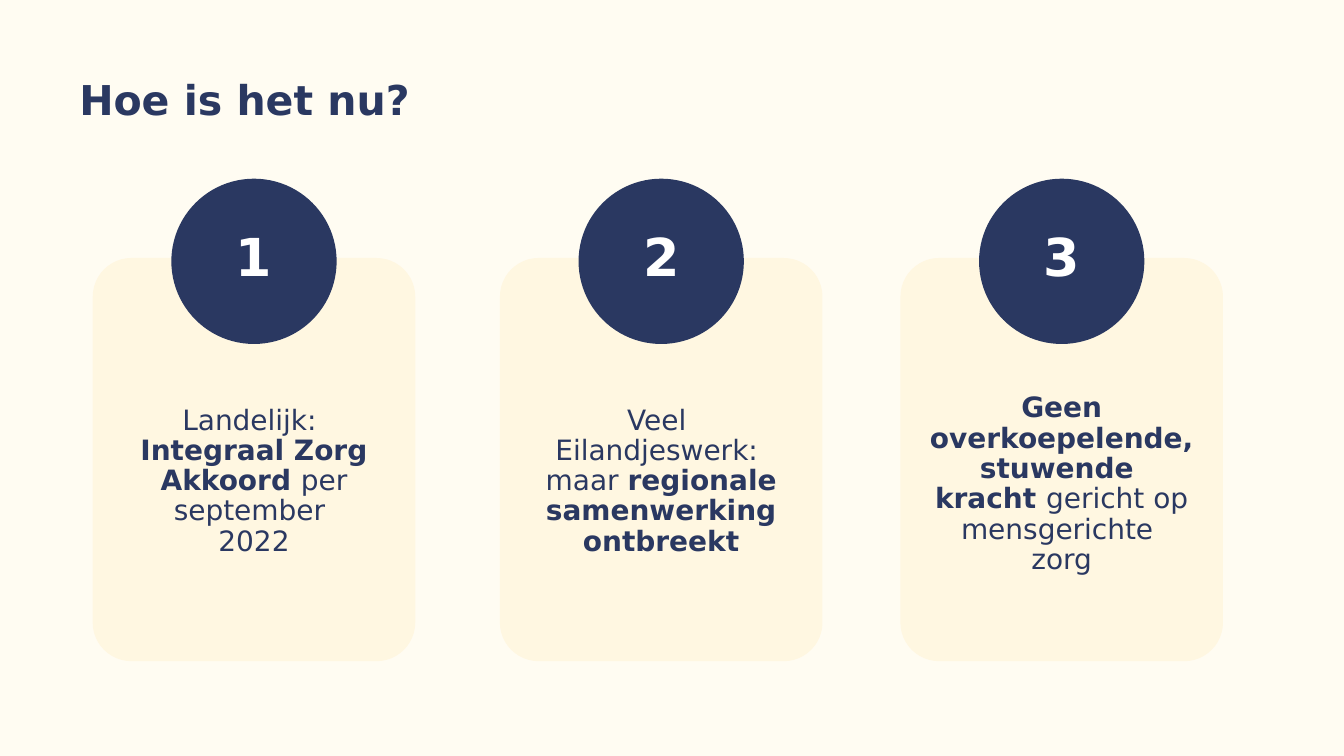
import pptx
import pptx.dml.color
import pptx.enum.shapes
import pptx.enum.text
import pptx.util

Inches = pptx.util.Inches
Align = pptx.enum.text.PP_ALIGN
Shape = pptx.enum.shapes.MSO_SHAPE

IVORY = pptx.dml.color.RGBColor(0xFF, 0xFC, 0xF2)
CREAM = pptx.dml.color.RGBColor(0xFF, 0xF7, 0xE1)
NAVY = pptx.dml.color.RGBColor(0x2A, 0x38, 0x61)
WHITE = pptx.dml.color.RGBColor(0xFF, 0xFF, 0xFF)
FONT = "DejaVu Sans"

CARD_TOP, CARD_WIDTH, CARD_HEIGHT = 1.92, 2.4, 3
CIRCLE_SIZE = 1.23
NUMBER_WIDTH, NUMBER_HEIGHT = 1.35, 0.67

CARDS = [
    (0.69, 1, 1.46, [("Landelijk: \n", False),
                     ("Integraal Zorg Akkoord ", True),
                     ("per september \n2022", False)]),
    (3.72, 1, 1.46, [("Veel \nEilandjeswerk: \nmaar ", False),
                     ("regionale samenwerking ontbreekt", True)]),
    (6.7, 0.91, 1.72, [("Geen overkoepelende, stuwende \nkracht ", True),
                       ("gericht op mensgerichte \nzorg", False)]),
]


def write_text(box, runs, size, color, align, spacing):
    frame = box.text_frame
    frame.word_wrap = True
    frame.auto_size = pptx.enum.text.MSO_AUTO_SIZE.SHAPE_TO_FIT_TEXT
    frame.vertical_anchor = pptx.enum.text.MSO_ANCHOR.TOP
    frame.margin_left = frame.margin_right = Inches(0.1)
    frame.margin_top = frame.margin_bottom = Inches(0.1)
    para = frame.paragraphs[0]
    para.alignment = align
    para.line_spacing = spacing
    para.font.name = FONT
    para.font.size = pptx.util.Pt(size)
    para.font.color.rgb = color
    for text, bold in runs:
        for index, line in enumerate(text.split("\n")):
            if index:
                para.add_line_break()
            if line:
                span = para.add_run()
                span.text = line
                span.font.bold = bold


def add_filled(page, kind, left, top, width, height, color):
    shape = page.shapes.add_shape(
        kind, Inches(left), Inches(top), Inches(width), Inches(height))
    shape.shadow.inherit = False
    shape.fill.solid()
    shape.fill.fore_color.rgb = color
    shape.line.fill.background()
    return shape


def add_label(page, left, top, width, height, runs, size, color):
    box = page.shapes.add_textbox(
        Inches(left), Inches(top), Inches(width), Inches(height))
    write_text(box, runs, size, color, Align.CENTER, 0.9)


def add_title(page, left, top, width, height, text):
    title = page.shapes.title
    title.left, title.top = Inches(left), Inches(top)
    title.width, title.height = Inches(width), Inches(height)
    write_text(title, [(text, True)], 22, NAVY, Align.LEFT, 1.15)


def add_card(page, left, top, width, height, number, text_offset, text_height, runs):
    card = add_filled(page, Shape.ROUNDED_RECTANGLE, left, top, width, height, CREAM)
    card.adjustments[0] = 0.12
    center = left + width / 2
    add_filled(page, Shape.OVAL, center - CIRCLE_SIZE / 2, top - 0.59,
               CIRCLE_SIZE, CIRCLE_SIZE, NAVY)
    add_label(page, left, top + text_offset, width, text_height, runs, 15, NAVY)
    add_label(page, center - NUMBER_WIDTH / 2, top - 0.3,
              NUMBER_WIDTH, NUMBER_HEIGHT, [(str(number), True)], 28, WHITE)


def main():
    deck = pptx.Presentation()
    deck.slide_width = Inches(10)
    deck.slide_height = deck.slide_width * 9 // 16
    page = deck.slides.add_slide(deck.slide_layouts[5])
    page.background.fill.solid()
    page.background.fill.fore_color.rgb = IVORY
    add_title(page, 0.49, 0.4, 6.74, 0.57, "Hoe is het nu?")
    for number, (left, text_offset, text_height, runs) in enumerate(CARDS, 1):
        add_card(page, left, CARD_TOP, CARD_WIDTH, CARD_HEIGHT,
                 number, text_offset, text_height, runs)
    deck.save("out.pptx")


if __name__ == "__main__":
    main()
